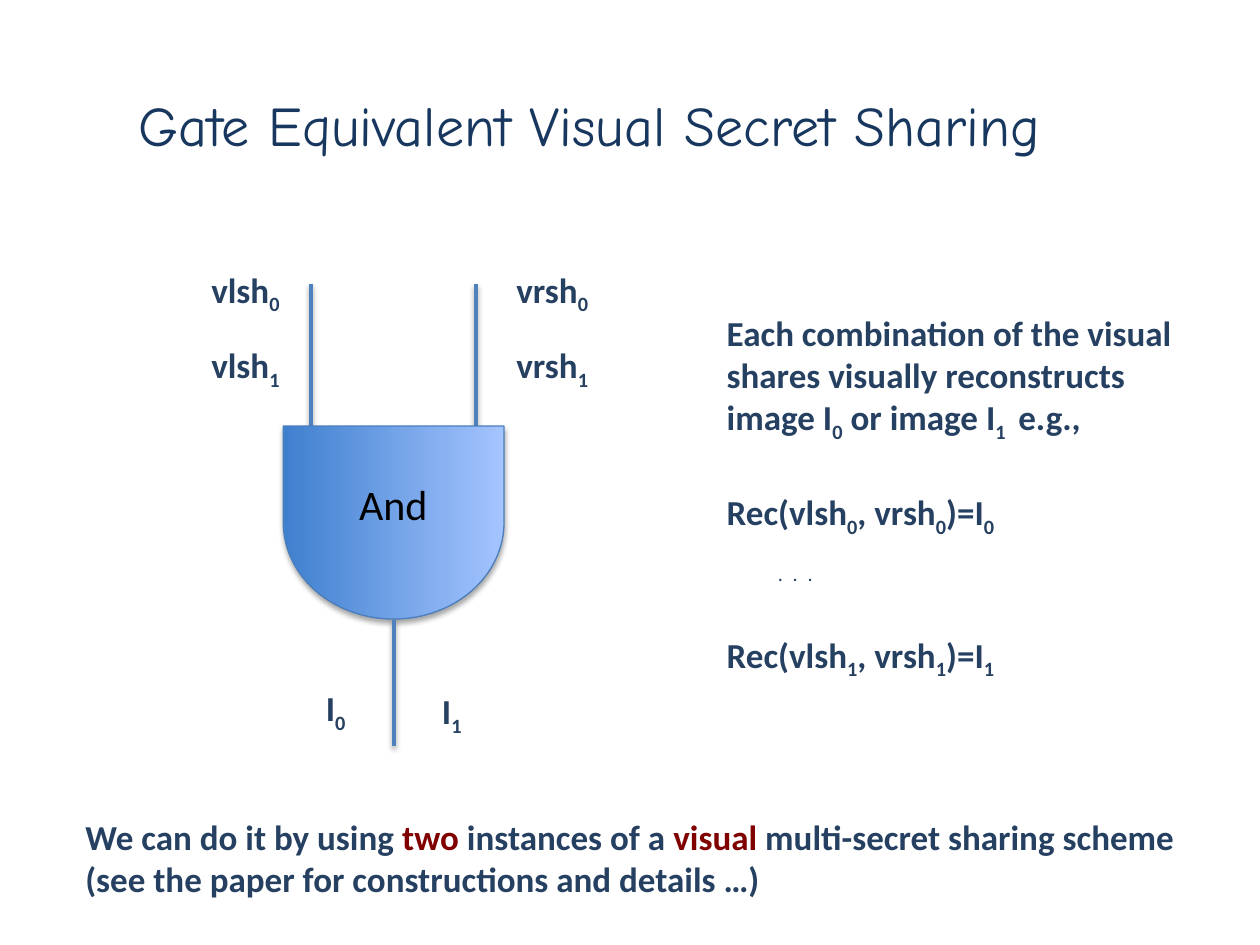
"""Build the slide on gate equivalent visual secret sharing."""
from lxml.etree import SubElement
from pptx import Presentation
from pptx.dml.color import RGBColor
from pptx.enum.shapes import MSO_CONNECTOR, MSO_SHAPE
from pptx.enum.text import MSO_AUTO_SIZE
from pptx.oxml.ns import qn
from pptx.util import Cm, Pt

BODY = {"name": "Calibri", "size": Pt(20), "bold": True}
NAVY = "254061"
SUBSCRIPT = {"baseline": "-25000"}
THEME = {
    "title": ({"name": "Comic Neue", "size": Pt(32)}, "17375E", {}),
    "gate": ({"name": "Calibri", "size": Pt(24)}, "000000", {}),
    "body": (BODY, NAVY, {}),
    "accent": (BODY, "800000", {}),
    "sub": (BODY, NAVY, SUBSCRIPT),
    "dots": ({**BODY, "bold": False}, NAVY, {**SUBSCRIPT, "spc": "150"}),
    "wire": ("4F81BD", Pt(2)),
    "outline": ("4B7EBC", Pt(0.75)),
    "gradient": ("3F80CE", "A4C4FF"),
}


def indexed(stem, index):
    return [(stem, "body"), (index, "sub")]


def reconstruction(index):
    return [*indexed("Rec(vlsh", index), *indexed(", vrsh", index), *indexed(")=I", index)]


GAP = {"space_before": Pt(27)}
TITLE = [({}, [("Gate Equivalent Visual Secret Sharing", "title")])]
GATE_NAME = [({}, [("And", "gate")])]
EXPLANATION = [
    ({}, [*indexed("Each combination of the visual shares visually reconstructs image I", "0"),
          *indexed(" or image I", "1 "), (" e.g.,", "body")]),
    (GAP, reconstruction("0")),
    ({}, [(". . .", "dots")]),
    (GAP, reconstruction("1")),
]
CONCLUSION = [
    ({}, [("We can do it by using ", "body"), ("two ", "accent"), ("instances of a ", "body"),
          ("visual ", "accent"), ("multi-secret sharing scheme", "body")]),
    ({}, [("(see the paper for constructions and details …)", "body")]),
]
INPUT_SHARES = [("vlsh", 4.01), ("vrsh", 10.16)]
OUTPUT_IMAGES = [("0", 6.32, 13.72), ("1", 8.66, 13.77)]
SHARE_TOP, SHARE_STEP = 5.28, 1.53
INPUT_WIRES = [(9.6, 5.72, 8.59), (6.27, 5.72, 8.59)]
OUTPUT_WIRE = (7.94, 12.5, 15.04)
GATE_BOX = (5.99, 8.31, 3.89, 4.45)


def add_text(slide, box, paragraphs, wrap=False):
    frame = slide.shapes.add_textbox(*map(Cm, box)).text_frame
    for attribute, value in {"word_wrap": wrap, "auto_size": MSO_AUTO_SIZE.SHAPE_TO_FIT_TEXT}.items():
        setattr(frame, attribute, value)
    for position, (layout, pieces) in enumerate(paragraphs):
        paragraph = frame.add_paragraph() if position else frame.paragraphs[0]
        for attribute, value in layout.items():
            setattr(paragraph, attribute, value)
        for words, style in pieces:
            font_values, colour, extras = THEME[style]
            run = paragraph.add_run()
            run.text = words
            for attribute, value in font_values.items():
                setattr(run.font, attribute, value)
            run.font.color.rgb = RGBColor.from_string(colour)
            properties = run.font._element if hasattr(run.font, "_element") else run._r.get_or_add_rPr()
            for attribute, value in extras.items():
                properties.set(attribute, value)
            if style == "dots":
                paragraph._p.get_or_add_pPr().set("marL", str(Cm(1.03)))


def style_part(part, line_style, distance, alpha):
    colour, width = THEME[line_style]
    part.line.color.rgb = RGBColor.from_string(colour)
    part.line.width = width
    effects = SubElement(part._element.spPr, qn("a:effectLst"))
    shadow = SubElement(effects, qn("a:outerShdw"), blurRad="40000", dist=str(distance),
                        dir="5400000", rotWithShape="0")
    black = SubElement(shadow, qn("a:srgbClr"), val="000000")
    SubElement(black, qn("a:alpha"), val=str(alpha))


def add_wire(slide, x, top, bottom):
    wire = slide.shapes.add_connector(MSO_CONNECTOR.STRAIGHT, Cm(x), Cm(top), Cm(x), Cm(bottom))
    style_part(wire, "wire", 20000, 38000)


def add_gate(slide):
    gate = slide.shapes.add_shape(MSO_SHAPE.FLOWCHART_DELAY, *map(Cm, GATE_BOX))
    gate.rotation = 90
    gate.fill.gradient()
    gate.fill.gradient_angle = 90
    for stop, position, colour in zip(gate.fill.gradient_stops, (0, 1), THEME["gradient"]):
        stop.position = position
        stop.color.rgb = RGBColor.from_string(colour)
    style_part(gate, "outline", 23000, 35000)


def main():
    deck = Presentation()
    deck.slide_width, deck.slide_height = Cm(25.4), Cm(19.05)
    slide = deck.slides.add_slide(deck.slide_layouts[6])
    add_text(slide, (2.54, 1.7, 20.73, 1.63), TITLE)
    for wire in INPUT_WIRES:
        add_wire(slide, *wire)
    add_gate(slide)
    add_text(slide, (6.99, 9.53, 1.9, 1.27), GATE_NAME)
    add_wire(slide, *OUTPUT_WIRE)
    for share, left in INPUT_SHARES:
        for row, index in enumerate("01"):
            top = SHARE_TOP + row * SHARE_STEP
            add_text(slide, (left, top, 2, 1.12), [({}, indexed(share, index))])
    for index, left, top in OUTPUT_IMAGES:
        add_text(slide, (left, top, 0.94, 1.12), [({}, indexed("I", index))])
    add_text(slide, (14.4, 6.15, 9.96, 6.53), EXPLANATION, wrap=True)
    add_text(slide, (1.47, 16.31, 22.86, 1.96), CONCLUSION, wrap=True)
    deck.save("out.pptx")


if __name__ == "__main__":
    main()
